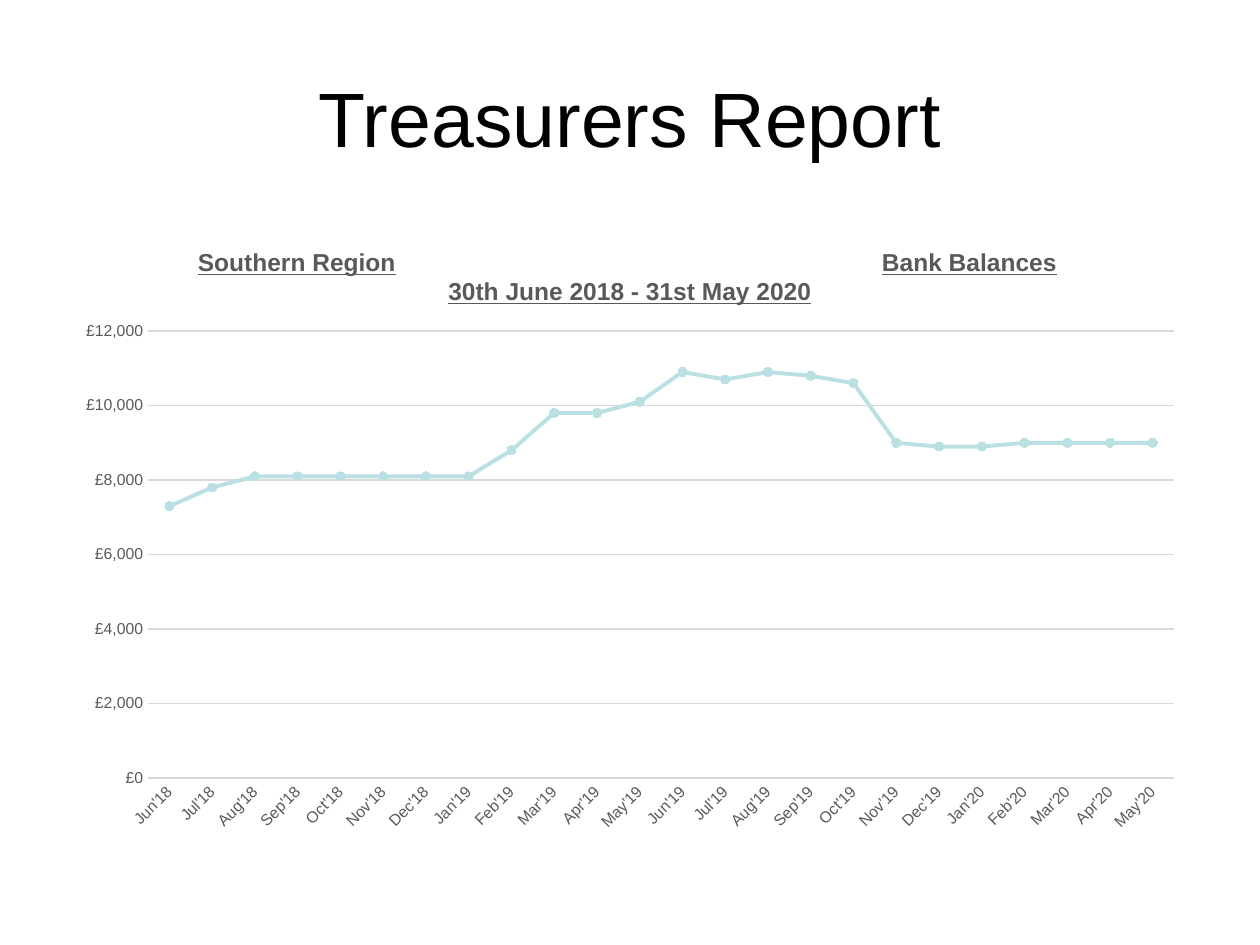
from typing import Any, NamedTuple

from lxml.etree import SubElement
from pptx import Presentation
from pptx.chart.data import CategoryChartData
from pptx.dml.color import RGBColor
from pptx.enum.chart import XL_CHART_TYPE as ChartType
from pptx.enum.chart import XL_MARKER_STYLE as Marker
from pptx.enum.chart import XL_TICK_MARK as Tick
from pptx.enum.text import MSO_ANCHOR as Anchor
from pptx.enum.text import PP_ALIGN as Align
from pptx.oxml.ns import qn
from pptx.util import Cm, Pt


class Place(NamedTuple):
    left: float
    top: float
    width: float
    height: float

    def lengths(self) -> list[Cm]:
        return [Cm(value) for value in self]


TITLE = Place(1.27, 0.76, 22.86, 3.18)
CHART = Place(1.27, 4.45, 22.86, 12.57)
HEADING = Place(3.99, 4.98, 17.42, 1.2)
BALANCES_TAB = 13.79
PLOT = {"x": 0.075, "y": 0.177, "w": 0.905, "h": 0.717}

BLACK, GREY, PALE_GREY, TEAL = "000000", "595959", "D9D9D9", "BBE0E3"
TITLE_FONT = {"name": "Arial", "size": Pt(44)}
HEADING_FONT = {"name": "Arial", "size": Pt(14), "bold": True, "underline": True}
AXIS_FONT = {"name": "Arial", "size": Pt(9)}

MONTHS = "Jan Feb Mar Apr May Jun Jul Aug Sep Oct Nov Dec".split()
FIRST_MONTH, FIRST_YEAR = 5, 18
BALANCES = [
    7300, 7800, 8100, 8100, 8100, 8100, 8100, 8100, 8800, 9800, 9800, 10100,
    10900, 10700, 10900, 10800, 10600, 9000, 8900, 8900, 9000, 9000, 9000, 9000,
]


def color(value: str) -> RGBColor:
    return RGBColor.from_string(value)


def style_font(font: Any, values: dict[str, Any], shade: str) -> None:
    for name, value in values.items():
        setattr(font, name, value)
    font.color.rgb = color(shade)


def style_line(line: Any, shade: str, width: float) -> None:
    line.color.rgb = color(shade)
    line.width = Pt(width)


def month_label(index: int) -> str:
    years, month = divmod(FIRST_MONTH + index, 12)
    return f"{MONTHS[month]}'{FIRST_YEAR + years}"


def add_title(page: Any) -> None:
    title = page.shapes.title
    title.left, title.top, title.width, title.height = TITLE.lengths()
    frame = title.text_frame
    frame.text = "Treasurers Report"
    frame.vertical_anchor = Anchor.MIDDLE
    para = frame.paragraphs[0]
    para.alignment = Align.CENTER
    style_font(para.runs[0].font, TITLE_FONT, BLACK)


def fix_plot_area(chart: Any) -> None:
    """Pin the inner plot area so that the heading fits above it."""
    plot_area = chart._chartSpace.chart.plotArea
    layout = plot_area.find(qn("c:layout"))
    if layout is None:
        layout = SubElement(plot_area, qn("c:layout"))
        plot_area.insert(0, layout)
    manual = SubElement(layout, qn("c:manualLayout"))
    settings = {"layoutTarget": "inner", "xMode": "edge", "yMode": "edge", **PLOT}
    for name, value in settings.items():
        SubElement(manual, qn(f"c:{name}")).set("val", str(value))


def add_balance_chart(page: Any) -> None:
    data = CategoryChartData()
    data.categories = [month_label(index) for index in range(len(BALANCES))]
    data.add_series("Series 1", BALANCES)
    chart = page.shapes.add_chart(ChartType.LINE_MARKERS, *CHART.lengths(), data).chart
    chart.has_title = chart.has_legend = False
    style_font(chart.font, {"name": "Arial", "size": Pt(10)}, BLACK)
    chart.plots[0].vary_by_categories = False
    fix_plot_area(chart)

    months, pounds = chart.category_axis, chart.value_axis
    for axis in (months, pounds):
        axis.major_tick_mark = axis.minor_tick_mark = Tick.NONE
        style_font(axis.tick_labels.font, AXIS_FONT, GREY)
    style_line(months.format.line, PALE_GREY, 0.75)
    months._element.find(qn("c:txPr")).find(qn("a:bodyPr")).set("rot", "-2700000")

    pounds.minimum_scale, pounds.maximum_scale, pounds.major_unit = 0, 12000, 2000
    pounds.tick_labels.number_format = '"£"#,##0'
    pounds.tick_labels.number_format_is_linked = False
    pounds.format.line.fill.background()
    style_line(pounds.major_gridlines.format.line, PALE_GREY, 0.75)

    series = chart.plots[0].series[0]
    series.smooth = False
    style_line(series.format.line, TEAL, 2.25)
    series.marker.style, series.marker.size = Marker.CIRCLE, 5
    series.marker.format.fill.solid()
    series.marker.format.fill.fore_color.rgb = color(TEAL)
    style_line(series.marker.format.line, TEAL, 0.75)


def add_heading(page: Any) -> None:
    frame = page.shapes.add_textbox(*HEADING.lengths()).text_frame
    frame.word_wrap = True
    for side in ("left", "top", "right", "bottom"):
        setattr(frame, f"margin_{side}", 0)
    frame.text = "Southern Region\tBank Balances\n30th June 2018 - 31st May 2020"
    region, period = frame.paragraphs
    region.alignment, period.alignment = Align.LEFT, Align.CENTER
    tabs = SubElement(region._p.get_or_add_pPr(), qn("a:tabLst"))
    tab = SubElement(tabs, qn("a:tab"))
    tab.set("pos", str(int(Cm(BALANCES_TAB))))
    tab.set("algn", "l")
    for para in frame.paragraphs:
        for span in para.runs:
            style_font(span.font, HEADING_FONT, GREY)


def main() -> None:
    deck = Presentation()
    deck.slide_width, deck.slide_height = Cm(25.4), Cm(19.05)
    page = deck.slides.add_slide(deck.slide_layouts[5])
    add_title(page)
    add_balance_chart(page)
    add_heading(page)
    deck.save("out.pptx")


if __name__ == "__main__":
    main()
